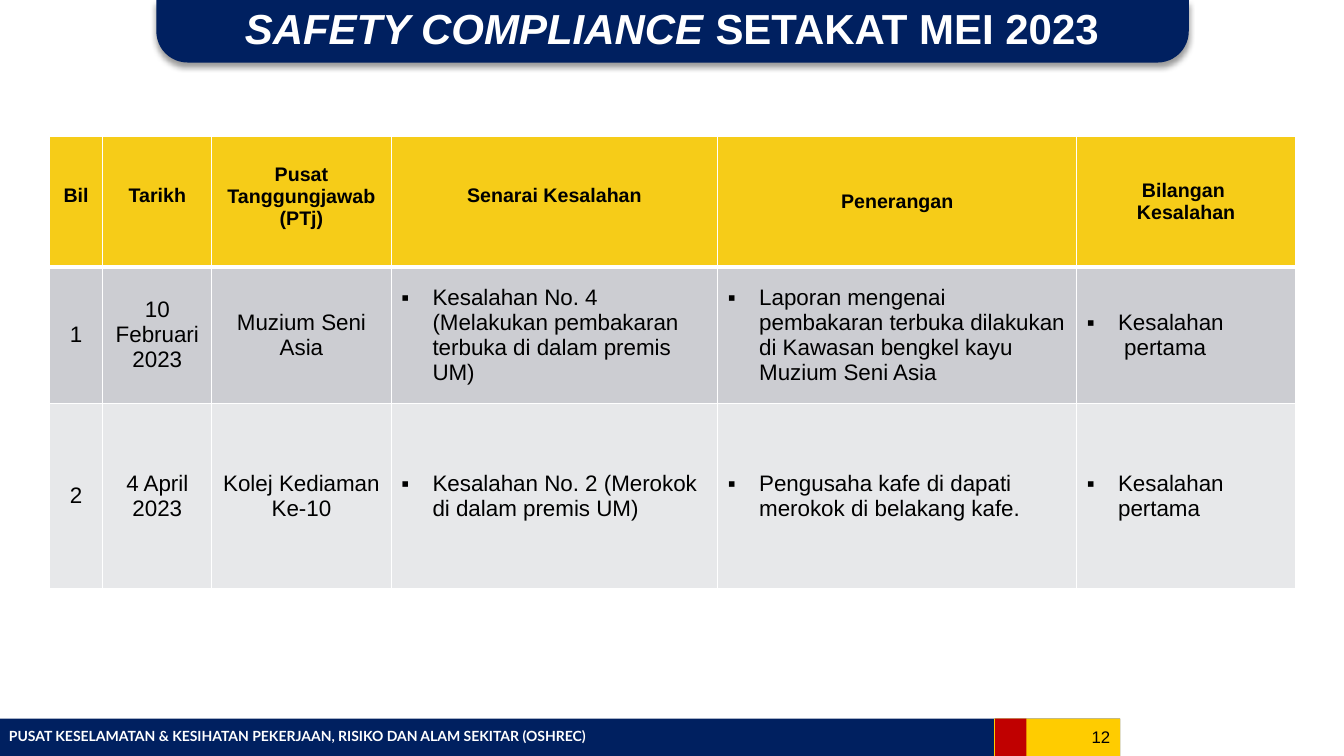
from lxml import etree
from pptx import Presentation
from pptx.dml.color import RGBColor
from pptx.enum import shapes, text
from pptx.oxml import parse_xml
from pptx.oxml.ns import nsdecls, qn
from pptx.util import Inches, Pt

NAVY = RGBColor(0x00, 0x20, 0x60)
RED = RGBColor(0xC0, 0x00, 0x00)
YELLOW = RGBColor(0xFF, 0xCC, 0x00)
GOLD = RGBColor(0xF6, 0xCC, 0x18)
DARK_GRAY = RGBColor(0xCC, 0xCD, 0xD2)
LIGHT_GRAY = RGBColor(0xE7, 0xE8, 0xEA)
WHITE = RGBColor(0xFF, 0xFF, 0xFF)
BLACK = RGBColor(0x00, 0x00, 0x00)

CENTER = text.PP_ALIGN.CENTER
MIDDLE = text.MSO_ANCHOR.MIDDLE
HANGING = 0.31
COLUMN_WIDTHS = [0.53, 1.08, 1.78, 3.24, 3.56, 2.17]
ROW_HEIGHTS = [1.3, 1.35, 1.84]
# Heading and its top margin; None centres the heading vertically
HEADINGS = [
    ("Bil", 0.48),
    ("Tarikh", 0.48),
    ("Pusat Tanggungjawab (PTj)", 0.27),
    ("Senarai Kesalahan", 0.48),
    ("Penerangan", None),
    ("Bilangan \nKesalahan", None),
]
OFFENCES = [
    ["1", "10 Februari 2023", "Muzium Seni Asia",
     "Kesalahan No. 4 (Melakukan pembakaran terbuka di dalam premis UM)",
     "Laporan mengenai pembakaran terbuka dilakukan di Kawasan bengkel kayu "
     "Muzium Seni Asia",
     "Kesalahan\npertama"],
    ["2", "4 April 2023", "Kolej Kediaman Ke-10",
     "Kesalahan No. 2 (Merokok di dalam premis UM)",
     "Pengusaha kafe di dapati merokok di belakang kafe.",
     "Kesalahan\npertama"],
]
FIRST_BULLET_COLUMN = 3
ROW_FILLS = [DARK_GRAY, LIGHT_GRAY]
SECOND_LINE_INDENTS = [0.37, HANGING]


def format_runs(paragraph, size, color, bold=False, font="Arial"):
    for span in paragraph.runs:
        span.font.name = font
        span.font.size = Pt(size)
        span.font.bold = bold
        span.font.color.rgb = color


def add_block(page, kind, left, top, width, height, color):
    block = page.shapes.add_shape(
        kind, Inches(left), Inches(top), Inches(width), Inches(height))
    block.shadow.inherit = False
    block.fill.solid()
    block.fill.fore_color.rgb = color
    block.line.fill.background()
    return block


def add_label(page, left, top, width, height, words):
    box = page.shapes.add_textbox(
        Inches(left), Inches(top), Inches(width), Inches(height))
    box.text_frame.word_wrap = True
    box.text_frame.text = words
    return box.text_frame


def add_banner(page):
    banner = add_block(page, shapes.MSO_SHAPE.ROUND_2_SAME_RECTANGLE,
                       1.55, 0, 10.24, 0.62, NAVY)
    banner.rotation = 180
    banner.adjustments[0] = 0.5
    effects = banner.element.spPr.find(qn("a:effectLst"))
    effects.append(parse_xml(
        f'<a:outerShdw {nsdecls("a")} blurRad="{Pt(4)}" dist="{Pt(3)}" '
        'dir="5400000" algn="t" rotWithShape="0"><a:srgbClr val="000000">'
        '<a:alpha val="40000"/></a:srgbClr></a:outerShdw>'))
    return banner


def fill_title(page):
    title = page.shapes.title
    title.left, title.top = Inches(1.86), Inches(0.05)
    title.width, title.height = Inches(9.61), Inches(0.45)
    title.element.addprevious(add_banner(page).element)
    frame = title.text_frame
    frame.vertical_anchor = MIDDLE
    frame.auto_size = text.MSO_AUTO_SIZE.NONE
    heading = frame.paragraphs[0]
    heading.alignment = CENTER
    for words, italic in [("SAFETY COMPLIANCE ", True), ("SETAKAT MEI 2023", False)]:
        span = heading.add_run()
        span.text = words
        span.font.italic = italic
    format_runs(heading, 30, WHITE, bold=True)


def add_footer(page):
    for left, width, color in [(0, 11.11, NAVY), (9.86, 1.25, YELLOW),
                               (9.87, 0.31, RED)]:
        add_block(page, shapes.MSO_SHAPE.RECTANGLE, left, 7.13, width, 0.37, color)
    unit = add_label(
        page, -0.01, 7.17, 9.29, 0.27,
        "PUSAT KESELAMATAN & KESIHATAN PEKERJAAN, RISIKO DAN ALAM SEKITAR (OSHREC)")
    format_runs(unit.paragraphs[0], 10, WHITE, bold=True, font="Lato")
    number = add_label(page, 9.98, 7.13, 1.13, 0.35, "12")
    number.vertical_anchor = MIDDLE
    number.paragraphs[0].alignment = text.PP_ALIGN.RIGHT
    format_runs(number.paragraphs[0], 12, BLACK)


def indent(paragraph, left, bullet=False):
    properties = paragraph._p.get_or_add_pPr()
    properties.set("marL", str(Inches(left)))
    properties.set("indent", str(-Inches(left) if bullet else 0))
    if bullet:
        etree.SubElement(properties, qn("a:buFont")).set("typeface", "Arial")
        etree.SubElement(properties, qn("a:buChar")).set("char", "▪")


def set_borders(cell, top=1, bottom=1):
    properties = cell._tc.get_or_add_tcPr()
    widths = [("lnL", 1), ("lnR", 1), ("lnT", top), ("lnB", bottom)]
    for position, (side, width) in enumerate(widths):
        properties.insert(position, parse_xml(
            f'<a:{side} {nsdecls("a")} w="{Pt(width)}"><a:solidFill>'
            f'<a:srgbClr val="{WHITE}"/></a:solidFill></a:{side}>'))


def fill_cell(cell, words, color, size, bold=False):
    cell.text = words
    cell.vertical_anchor = MIDDLE
    cell.fill.solid()
    cell.fill.fore_color.rgb = color
    for paragraph in cell.text_frame.paragraphs:
        format_runs(paragraph, size, BLACK, bold)


def center(cell):
    for paragraph in cell.text_frame.paragraphs:
        paragraph.alignment = CENTER


def add_offence_table(page):
    table = page.shapes.add_table(
        len(ROW_HEIGHTS), len(COLUMN_WIDTHS), Inches(0.49), Inches(1.35),
        Inches(sum(COLUMN_WIDTHS)), Inches(sum(ROW_HEIGHTS))).table
    for column, width in zip(table.columns, COLUMN_WIDTHS):
        column.width = Inches(width)
    for row, height in zip(table.rows, ROW_HEIGHTS):
        row.height = Inches(height)

    for cell, (words, margin) in zip(table.rows[0].cells, HEADINGS):
        fill_cell(cell, words, GOLD, 14, bold=True)
        center(cell)
        set_borders(cell, bottom=3)
        if margin is not None:
            cell.vertical_anchor = text.MSO_ANCHOR.TOP
            cell.margin_top = Inches(margin)

    for index, offence in enumerate(OFFENCES):
        for column, words in enumerate(offence):
            cell = table.cell(index + 1, column)
            fill_cell(cell, words, ROW_FILLS[index], 16)
            set_borders(cell, top=3 if index == 0 else 1)
            if column < FIRST_BULLET_COLUMN:
                center(cell)
                continue
            first, *others = cell.text_frame.paragraphs
            indent(first, HANGING, bullet=True)
            for paragraph in others:
                indent(paragraph, SECOND_LINE_INDENTS[index])


def main():
    deck = Presentation()
    deck.slide_width, deck.slide_height = Inches(13.33), Inches(7.5)
    page = deck.slides.add_slide(deck.slide_layouts.get_by_name("Title Only"))
    fill_title(page)
    add_footer(page)
    add_offence_table(page)
    deck.save("out.pptx")


if __name__ == "__main__":
    main()
